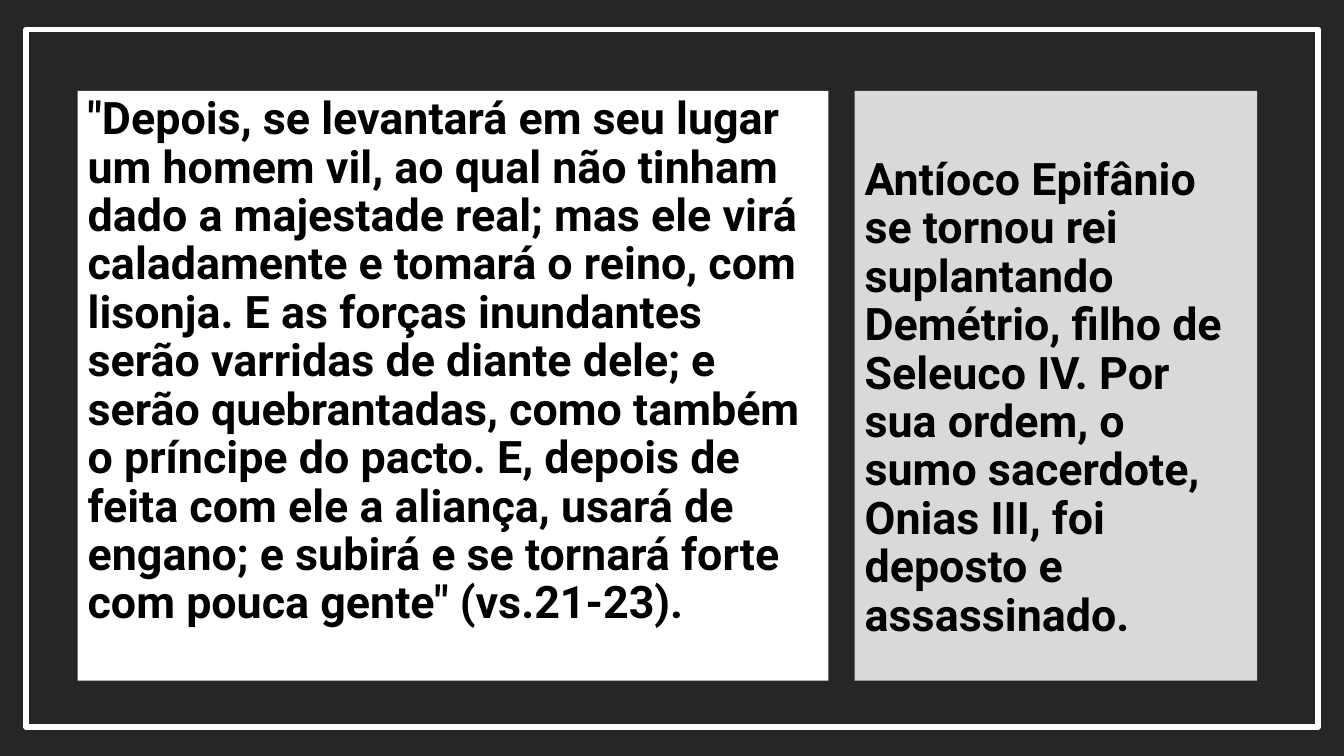
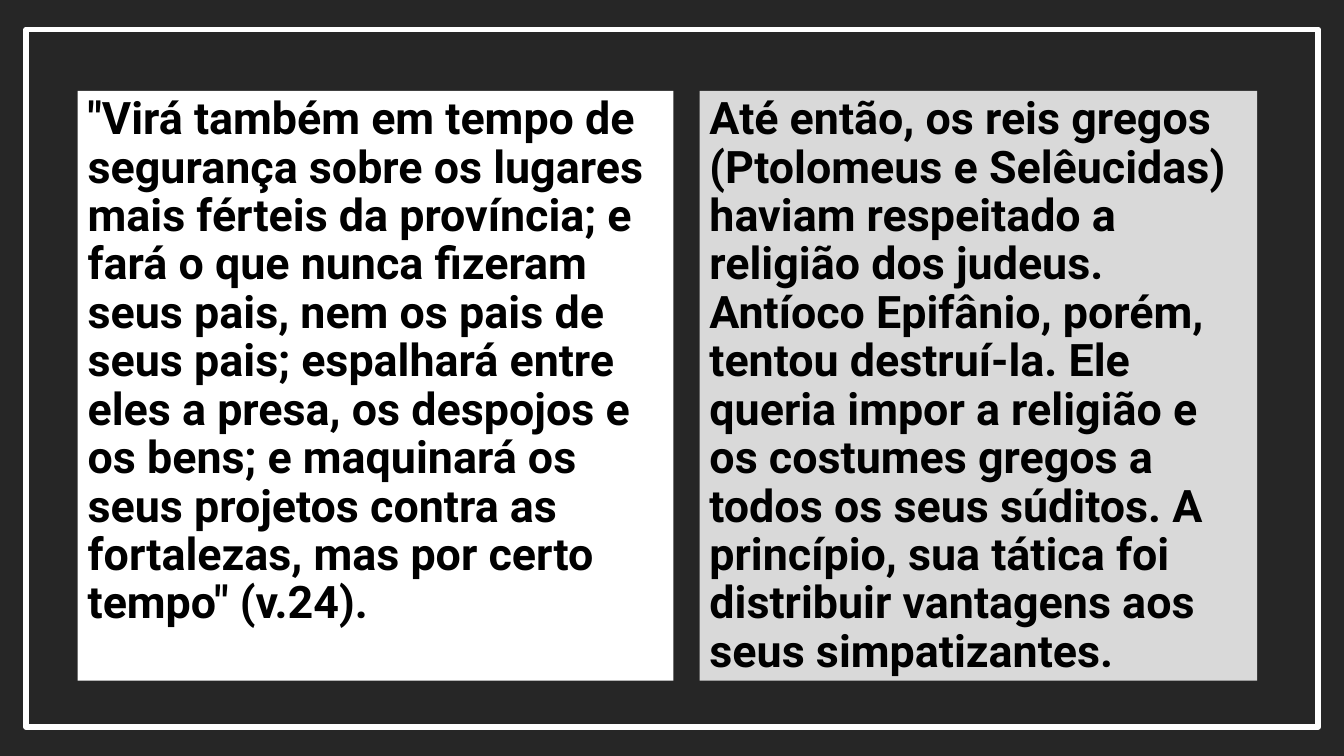
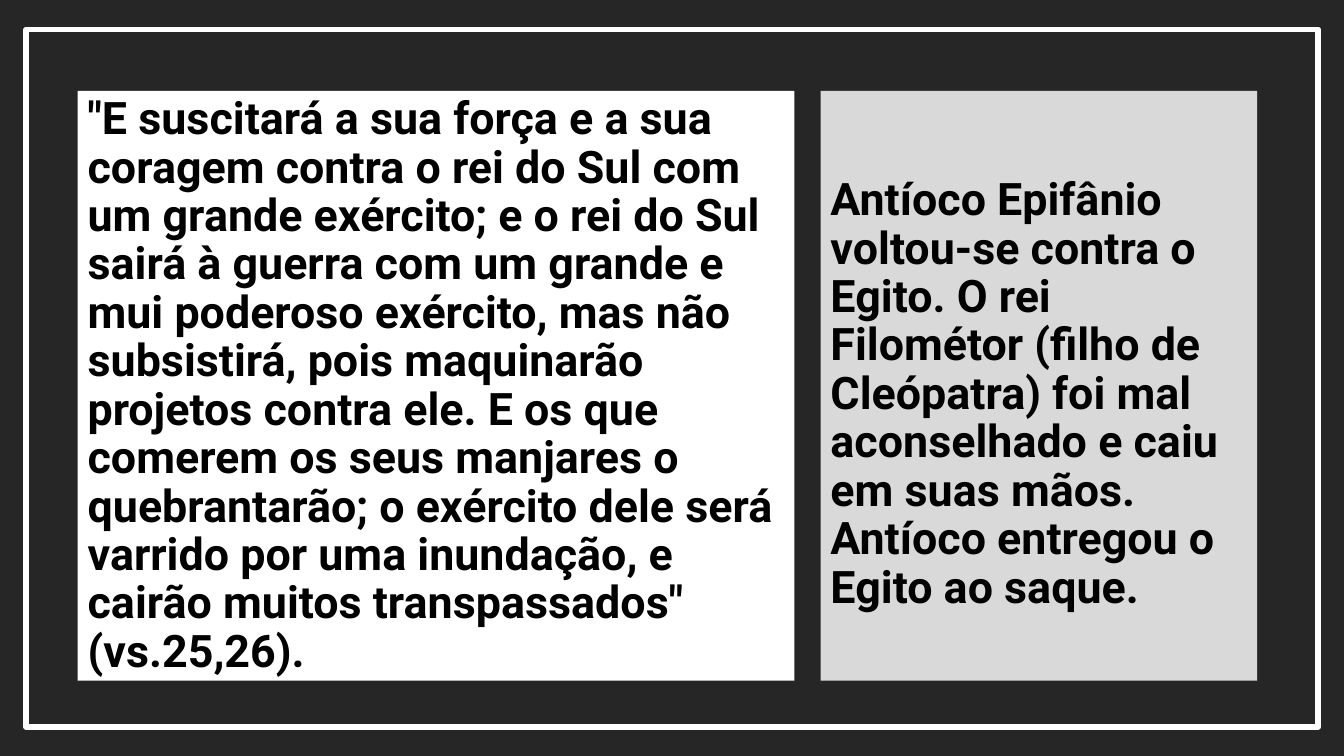
from pptx import Presentation
from pptx import util as u
from pptx.dml.color import RGBColor
from pptx.enum import shapes, text

CHARCOAL = RGBColor(0x26, 0x26, 0x26)
WHITE = RGBColor(0xFF, 0xFF, 0xFF)
GREY = RGBColor(0xD9, 0xD9, 0xD9)
BLACK = RGBColor(0x00, 0x00, 0x00)

SLIDE_WIDTH, SLIDE_HEIGHT = u.Cm(33.87), u.Cm(19.05)
FRAME_BOX = (u.Cm(0.66), u.Cm(0.74), u.Cm(32.56), u.Cm(17.58))
CONTENT_BOX = (u.Cm(1.96), u.Cm(2.29), u.Cm(29.72), u.Cm(14.86))
GAP = u.Cm(0.66)
TOP_INSET = u.Cm(0.13)

FRAME_FORMAT = {"width": u.Pt(4)}
TEXT_FRAME_FORMAT = {
    "word_wrap": True,
    "vertical_anchor": text.MSO_ANCHOR.TOP,
    "margin_left": u.Cm(0.25),
    "margin_right": u.Cm(0.25),
    "margin_bottom": u.Cm(0.13),
}
PARAGRAPH_FORMAT = {
    "alignment": text.PP_ALIGN.LEFT,
    "line_spacing": 0.9,
    "space_before": u.Pt(10),
}
FONT_FORMAT = {"name": "Roboto", "size": u.Pt(32), "bold": True}

PASSAGES = [
    {
        "verse": '"Depois, se levantará em seu lugar um homem vil, ao qual não tinham dado a '
                 "majestade real; mas ele virá caladamente e tomará o reino, com lisonja. E as "
                 "forças inundantes serão varridas de diante dele; e serão quebrantadas, como "
                 "também o príncipe do pacto. E, depois de feita com ele a aliança, usará de "
                 'engano; e subirá e se tornará forte com pouca gente" (vs.21-23).',
        "comment": "Antíoco Epifânio se tornou rei suplantando Demétrio, filho de Seleuco IV. "
                   "Por sua ordem, o sumo sacerdote, Onias III, foi deposto e assassinado.",
        "verse_width": u.Cm(18.92),
        "comment_inset": u.Cm(1.66),
    },
    {
        "verse": '"Virá também em tempo de segurança sobre os lugares mais férteis da '
                 "província; e fará o que nunca fizeram seus pais, nem os pais de seus pais; "
                 "espalhará entre eles a presa, os despojos e os bens; e maquinará os seus "
                 'projetos contra as fortalezas, mas por certo tempo" (v.24).',
        "comment": "Até então, os reis gregos (Ptolomeus e Selêucidas) haviam respeitado a "
                   "religião dos judeus. Antíoco Epifânio, porém, tentou destruí-la. Ele queria "
                   "impor a religião e os costumes gregos a todos os seus súditos. A princípio, "
                   "sua tática foi distribuir vantagens aos seus simpatizantes.",
        "verse_width": u.Cm(15.01),
        "comment_inset": TOP_INSET,
    },
    {
        "verse": '"E suscitará a sua força e a sua coragem contra o rei do Sul com um grande '
                 "exército; e o rei do Sul sairá à guerra com um grande e mui poderoso exército, "
                 "mas não subsistirá, pois maquinarão projetos contra ele. E os que comerem os "
                 "seus manjares o quebrantarão; o exército dele será varrido por uma inundação, "
                 'e cairão muitos transpassados" (vs.25,26).',
        "comment": "Antíoco Epifânio voltou-se contra o Egito. O rei Filométor (filho de "
                   "Cleópatra) foi mal aconselhado e caiu em suas mãos. Antíoco entregou o "
                   "Egito ao saque.",
        "verse_width": u.Cm(18.06),
        "comment_inset": u.Cm(2.17),
    },
]


def apply_format(target, values):
    """Set each attribute of the target from a dict of values."""
    for name, value in values.items():
        setattr(target, name, value)


def add_rectangle(slide, box):
    """Add a rectangle without a shadow."""
    shape = slide.shapes.add_shape(shapes.MSO_SHAPE.RECTANGLE, *box)
    shape.shadow.inherit = False
    return shape


def add_frame(slide, box):
    """Draw the white outline around the slide."""
    frame = add_rectangle(slide, box)
    frame.fill.background()
    frame.line.color.rgb = WHITE
    apply_format(frame.line, FRAME_FORMAT)


def add_panel(slide, box, color, content, top_inset):
    """Add a filled panel with bold text starting below the top inset."""
    panel = add_rectangle(slide, box)
    panel.fill.solid()
    panel.fill.fore_color.rgb = color
    panel.line.fill.background()
    apply_format(panel.text_frame, {**TEXT_FRAME_FORMAT, "margin_top": top_inset})
    paragraph = panel.text_frame.paragraphs[0]
    apply_format(paragraph, PARAGRAPH_FORMAT)
    run = paragraph.add_run()
    run.text = content
    apply_format(run.font, FONT_FORMAT)
    run.font.color.rgb = BLACK


def add_passage(slide, box, verse, comment, verse_width, comment_inset):
    """Split the box into a verse panel and a comment panel."""
    left, top, width, height = box
    offset = verse_width + GAP
    add_panel(slide, (left, top, verse_width, height), WHITE, verse, TOP_INSET)
    add_panel(slide, (left + offset, top, width - offset, height), GREY, comment, comment_inset)


def main():
    """Build the presentation and save it."""
    presentation = Presentation()
    apply_format(presentation, {"slide_width": SLIDE_WIDTH, "slide_height": SLIDE_HEIGHT})
    background = presentation.slide_master.background.fill
    background.solid()
    background.fore_color.rgb = CHARCOAL
    for passage in PASSAGES:
        slide = presentation.slides.add_slide(presentation.slide_layouts[6])
        add_frame(slide, FRAME_BOX)
        add_passage(slide, CONTENT_BOX, **passage)
    presentation.save("out.pptx")


if __name__ == "__main__":
    main()
